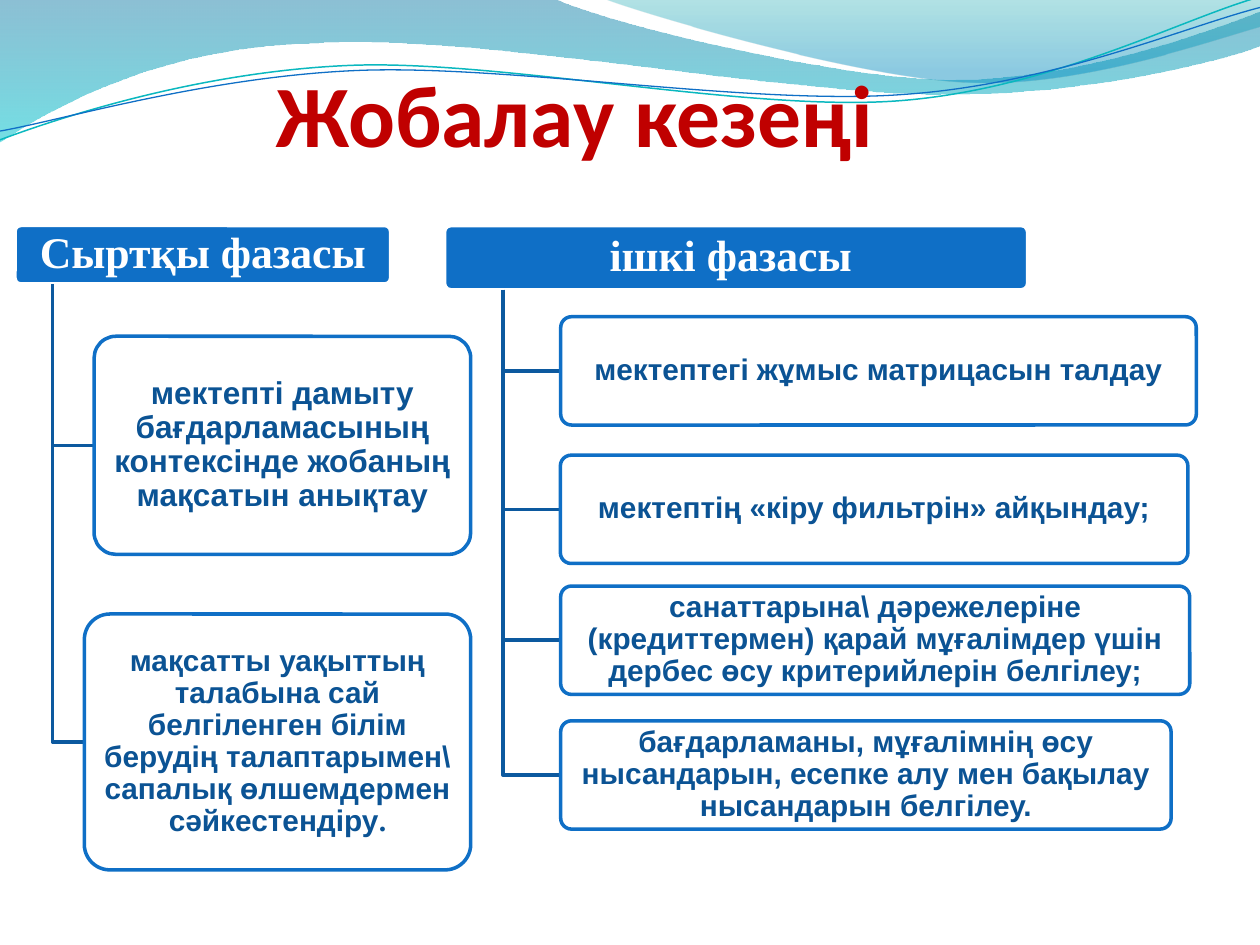
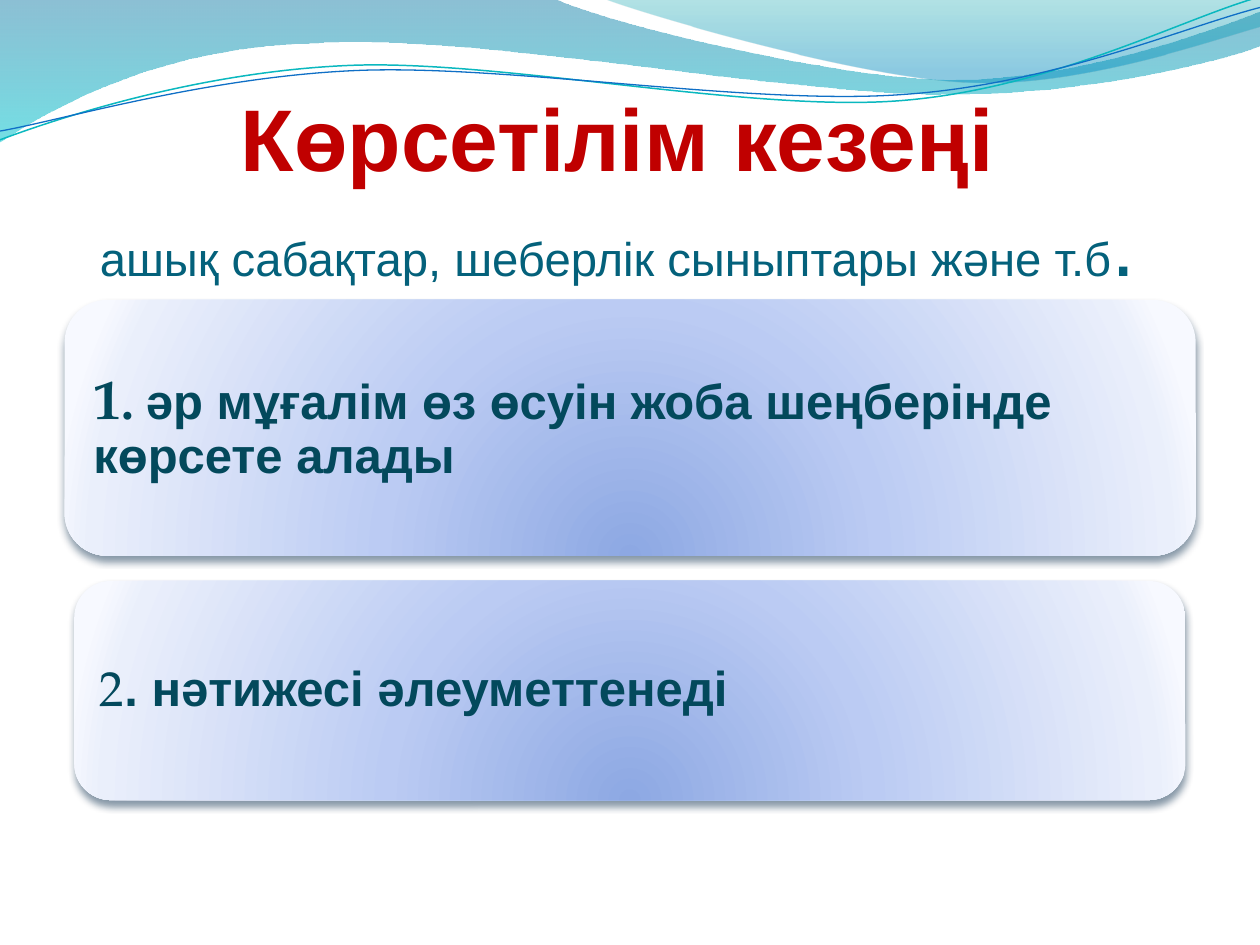
import math
import pptx
import pptx.dml.color
import pptx.enum.shapes
import pptx.enum.text
import pptx.oxml
import pptx.oxml.ns
import pptx.util

Pt = pptx.util.Pt
ROUNDED = pptx.enum.shapes.MSO_SHAPE.ROUNDED_RECTANGLE
ALIGN = pptx.enum.text.PP_ALIGN
ANCHOR = pptx.enum.text.MSO_ANCHOR
NAMESPACE = pptx.oxml.ns.nsdecls("a")
BLUE = "0F6FC6"
DARK_BLUE = "0C599F"
CARD_TEXT = "0B5394"
TEAL = "04617B"
DARK_TEAL = "03495C"
RED = "C00000"
WHITE = "FFFFFF"
TILT = 357.3
DOWNWARD = '<a:lin ang="5400000" scaled="0"/>'
FROM_BELOW = ('<a:path path="circle">'
              '<a:fillToRect l="50000" t="130000" r="50000" b="-30000"/></a:path>')


def paint(part, *stops, direction=None):
    if direction is None:
        part.fill.solid()
        part.fill.fore_color.rgb = pptx.dml.color.RGBColor.from_string(stops[0])
        return
    part.fill.gradient()
    gradient = part._element.spPr.find(pptx.oxml.ns.qn("a:gradFill"))
    for child in list(gradient):
        gradient.remove(child)
    colours = "".join(
        f'<a:gs pos="{position * 1000}"><a:srgbClr val="{colour}">'
        f'<a:alpha val="{opacity * 1000}"/></a:srgbClr></a:gs>'
        for position, colour, opacity in stops)
    filled = pptx.oxml.parse_xml(
        f'<a:gradFill {NAMESPACE}><a:gsLst>{colours}</a:gsLst>{direction}</a:gradFill>')
    for child in list(filled):
        gradient.append(child)


def write(shape, text, size, colour, font="Arial", bold=True, align=ALIGN.CENTER,
          anchor=ANCHOR.MIDDLE, inset=(2.7, 1.8, 2.7, 1.8), spacing=0.9):
    frame = shape.text_frame
    frame.word_wrap = True
    frame.vertical_anchor = anchor
    frame.margin_left, frame.margin_top, frame.margin_right, frame.margin_bottom = map(Pt, inset)
    paragraph = frame.paragraphs[0]
    paragraph.alignment = align
    paragraph.line_spacing = spacing
    run = paragraph.add_run()
    run.text = text
    run.font.size = Pt(size)
    run.font.name = font
    run.font.bold = bold
    paint(run.font, colour)


waves = [
    ([(0, 0), (316.8, -0.7),
      (342.7, 12.2), (478.1, 45.4), (545.8, 45.4),
      (614.2, 45.4), (689.8, 18.7), (720, 6.5),
      (720.7, 25.9),
      (707.8, 31.7), (626.4, 54.7), (537.1, 54),
      (447.8, 54), (275, 20.2), (185, 24.5),
      (92.9, 25.9), (33.1, 59.8), (-0.7, 81.4)],
     (1, 4, 8, 11, 14), [(0, "0074A1", 45), (100, "00C6CF", 55)], None, None),
    ([(344.9, -0.7),
      (366.5, 7.9), (491, 44.6), (553.7, 46.8),
      (616.3, 49.7), (691.9, 23), (720, 15.1),
      (720, 0)],
     (0, 3), [(0, "00A1A9", 30), (80, "008BBF", 45)], None, None),
    ([(0, 79.9),
      (34.6, 67), (113.8, 41), (199.4, 37.4),
      (284.4, 33.8), (427, 64.1), (513.4, 57.6),
      (599.8, 51.1), (675.4, 10.8), (718.6, -1.4)],
     (0, 3, 6), None, ("0AB8BF", 0.85), (359.3, 41.4)),
    ([(0, 74.9),
      (33.8, 69.1), (118.1, 43.9), (203.8, 40.3),
      (290.2, 36.7), (429.8, 60.5), (516.2, 54),
      (601.9, 48.2), (677.5, 15.1), (720, 4.3)],
     (0, 3, 6), None, (BLUE, 0.75), (359.6, 42.5)),
]

titles = [
    ((36, 21.6, 585.2, 72.7), "Жобалау кезеңі", "Calibri"),
    ((36, 21.6, 648, 146.2), "Көрсетілім кезеңі ", "Arial"),
]

deck = pptx.Presentation()
deck.slide_width, deck.slide_height = Pt(720), Pt(540)
title_boxes = []
title_format = dict(anchor=ANCHOR.BOTTOM, inset=(0, 3.6, 0, 0), spacing=1.0)
level = math.radians(360 - TILT)

for place, title, font in titles:
    slide = deck.slides.add_slide(deck.slide_layouts[6])
    for points, curve_starts, gradient, stroke, pivot in waves:
        if pivot:
            px, py = pivot
            points = [(px + (x - px) * math.cos(level) - (y - py) * math.sin(level),
                       py + (x - px) * math.sin(level) + (y - py) * math.cos(level))
                      for x, y in points]
        corners = [(Pt(x), Pt(y)) for x, y in points]
        outline = slide.shapes.build_freeform(*corners[0])
        outline.add_line_segments(corners[1:], close=stroke is None)
        wave = outline.convert_to_shape()
        sides = list(wave._element.spPr.iter(pptx.oxml.ns.qn("a:lnTo")))
        for first in curve_starts:
            curve = pptx.oxml.parse_xml(f"<a:cubicBezTo {NAMESPACE}/>")
            sides[first].addprevious(curve)
            for side in sides[first:first + 3]:
                curve.append(side[0])
                side.getparent().remove(side)
        wave.shadow.inherit = False
        if stroke:
            wave.rotation = TILT
            wave.fill.background()
            paint(wave.line, stroke[0])
            wave.line.width = Pt(stroke[1])
        else:
            paint(wave, *gradient, direction=DOWNWARD)
            wave.line.fill.background()
    title_box = slide.shapes.add_textbox(*map(Pt, place))
    write(title_box, title, 50, RED, font=font, **title_format)
    title_boxes.append(title_box)

design_slide, showing_slide = deck.slides

phases = [
    ((8.6, 128.9, 214.6, 33.4), "Сыртқы фазасы", [
        ((53.8, 192.2, 215.2, 124.6), 18,
         "мектепті дамыту бағдарламасының контексінде жобаның мақсатын анықтау", ""),
        ((48.2, 350.9, 220.8, 146.2), 17,
         "мақсатты уақыттың талабына сай белгіленген білім берудің талаптарымен\\ "
         "сапалық өлшемдермен сәйкестендіру", "."),
    ]),
    ((254, 128.9, 333.2, 36.7), "ішкі фазасы ", [
        ((320.4, 181, 363.2, 61.9), 17, "мектептегі жұмыс матрицасын талдау", ""),
        ((320.2, 260.1, 358.6, 61.9), 17, "мектептің «кіру фильтрін» айқындау;", ""),
        ((320.4, 334.9, 359.5, 61.9), 17,
         "санаттарына\\ дәрежелеріне (кредиттермен) қарай мұғалімдер үшін "
         "дербес өсу критерийлерін белгілеу;", ""),
        ((320.4, 411.9, 348.8, 61.9), 17,
         "бағдарламаны, мұғалімнің өсу нысандарын, есепке алу мен бақылау "
         "нысандарын белгілеу.", ""),
    ]),
]

for header_place, phase, tasks in phases:
    left, top, width, height = header_place
    trunk, trunk_top = left + width / 10, top + height
    header = design_slide.shapes.add_shape(ROUNDED, *map(Pt, header_place))
    paint(header, BLUE)
    paint(header.line, WHITE)
    write(header, phase, 25, WHITE, font="Times New Roman")
    boxes = [header]
    for task_place, size, task, ending in tasks:
        middle = task_place[1] + task_place[3] / 2
        elbow = design_slide.shapes.build_freeform(Pt(trunk), Pt(trunk_top))
        elbow.add_line_segments(
            [(Pt(trunk), Pt(middle)), (Pt(task_place[0]), Pt(middle))], close=False)
        branch = elbow.convert_to_shape()
        branch.shadow.inherit = False
        branch.fill.background()
        paint(branch.line, DARK_BLUE)
        branch.line.width = Pt(2)
        card = design_slide.shapes.add_shape(ROUNDED, *map(Pt, task_place))
        paint(card, WHITE)
        paint(card.line, BLUE)
        write(card, task, size, CARD_TEXT)
        if ending:
            write(card, ending, size, CARD_TEXT, font="Times New Roman")
        boxes.append(card)
    for box in boxes:
        box.adjustments[0] = 0.1
        box.shadow.inherit = False
        box.line.width = Pt(2)

title_boxes[1].text_frame.paragraphs[0].add_line_break()
write(title_boxes[1], "ашық сабақтар, шеберлік сыныптары және т.б", 27, TEAL,
      bold=False, **title_format)
write(title_boxes[1], ". ", 50, TEAL, bold=False, **title_format)

results = [
    ((36.9, 171.4, 646.4, 146.2), 9.4, [
        ("1", 32, "TeX Gyre Pagella", True),
        (". ", 28, "Times New Roman", True),
        ("әр мұғалім өз өсуін жоба шеңберінде көрсете алады", 28, "Arial", True),
    ]),
    ((42.4, 332, 635, 125.2), 8.6, [
        ("2", 28, "TeX Gyre Pagella", False),
        (". нәтижесі әлеуметтенеді", 28, "Arial", True),
    ]),
]
glow = [(0, "8DA8E3", 100), (43, "BBCBF3", 100), (93, "EAEFFB", 100), (100, "F7F9FF", 100)]

for place, margin, runs in results:
    panel = showing_slide.shapes.add_shape(ROUNDED, *map(Pt, place))
    paint(panel, *glow, direction=FROM_BELOW)
    panel.line.fill.background()
    panel.shadow.inherit = False
    panel._element.spPr.find(pptx.oxml.ns.qn("a:effectLst")).append(pptx.oxml.parse_xml(
        f'<a:outerShdw {NAMESPACE} blurRad="{Pt(4.5)}" dist="{Pt(3)}" dir="5400000" '
        'rotWithShape="0"><a:srgbClr val="042747"><a:alpha val="48000"/></a:srgbClr>'
        '</a:outerShdw>'))
    for text, size, font, bold in runs:
        write(panel, text, size, DARK_TEAL, font=font, bold=bold,
              align=ALIGN.LEFT, inset=(margin,) * 4)

deck.save("out.pptx")
